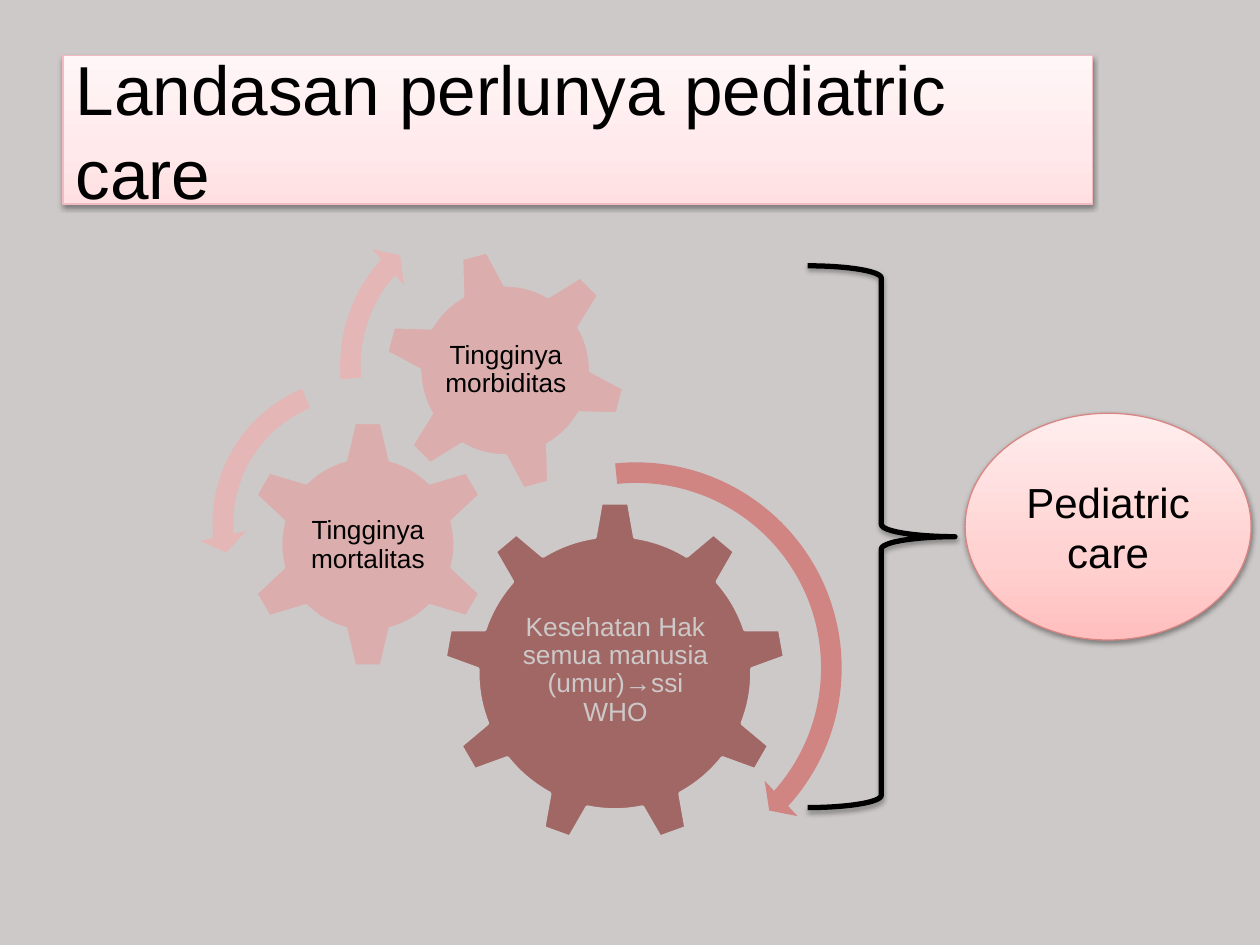
from dataclasses import dataclass

from lxml import etree
from pptx import Presentation, util as u
from pptx.dml.color import RGBColor
from pptx.enum import shapes as s, text as t
from pptx.oxml.ns import qn

COLUMNS, ROWS = 100, 75
FONT = "Arial"
BLACK = RGBColor(0x00, 0x00, 0x00)
GREY = RGBColor(0xCD, 0xC9, 0xC9)
DARK_ROSE = RGBColor(0xA1, 0x67, 0x65)
ROSE = RGBColor(0xDB, 0xAE, 0xAD)
CORAL = RGBColor(0xD0, 0x85, 0x83)
PALE_ROSE = RGBColor(0xE4, 0xB7, 0xB6)
OUTLINE = RGBColor(0xD7, 0x86, 0x84)
TITLE_OUTLINE = RGBColor(0xF0, 0xBC, 0xBF)
TITLE_STOPS = ((0, RGBColor(0xFF, 0xDF, 0xE1)), (35, RGBColor(0xFF, 0xE9, 0xEB)),
               (100, RGBColor(0xFF, 0xF6, 0xF7)))
OUTCOME_STOPS = ((0, RGBColor(0xFF, 0xBF, 0xBE)), (35, RGBColor(0xFF, 0xD1, 0xD0)),
                 (100, RGBColor(0xFF, 0xED, 0xED)))


@dataclass(frozen=True)
class Area:
    column: float
    row: float
    columns: float
    rows: float


@dataclass(frozen=True)
class Gear:
    preset: s.MSO_SHAPE
    area: Area
    label_area: Area
    label: str
    fill: RGBColor
    ink: RGBColor = BLACK
    rotation: float = 0


@dataclass(frozen=True)
class TurnArrow:
    preset: s.MSO_SHAPE
    area: Area
    adjustments: tuple[float, ...]
    fill: RGBColor


GEARS = (
    Gear(s.MSO_SHAPE.GEAR_9, Area(35.2, 39.8, 27.2, 27.2), Area(40.7, 46.2, 16.3, 14),
         "Kesehatan Hak semua manusia (umur)→ssi WHO", DARK_ROSE, GREY),
    Gear(s.MSO_SHAPE.GEAR_6, Area(19.3, 33.3, 19.8, 19.8), Area(24.3, 38.4, 9.8, 9.8),
         "Tingginya mortalitas", ROSE),
    Gear(s.MSO_SHAPE.GEAR_6, Area(30.4, 19.7, 19.4, 19.4), Area(34.7, 23.9, 10.9, 10.9),
         "Tingginya morbiditas", ROSE, rotation=345),
)
TURN_ARROWS = (
    TurnArrow(s.MSO_SHAPE.CIRCULAR_ARROW, Area(33.1, 35.6, 34.8, 34.8),
              (0.047, 2.99, 25.236, 158.454, 0.055), CORAL),
    TurnArrow(s.MSO_SHAPE.LEFT_CIRCULAR_ARROW, Area(15.8, 28.9, 25.3, 25.3),
              (0.065, 4.3, 104.891, 148.378, 0.075), PALE_ROSE),
    TurnArrow(s.MSO_SHAPE.CIRCULAR_ARROW, Area(25.9, 15.4, 27.3, 27.3),
              (0.06, 3.941, 133.138, 105.082, 0.07), PALE_ROSE),
)

deck = Presentation()
deck.slide_width, deck.slide_height = u.Inches(10), u.Inches(7.5)


def place(area: Area) -> tuple[int, int, int, int]:
    column, row = deck.slide_width / COLUMNS, deck.slide_height / ROWS
    return (round(area.column * column), round(area.row * row),
            round(area.columns * column), round(area.rows * row))


def add_preset(parent, preset: s.MSO_SHAPE, area: Area):
    shape = parent.add_shape(preset, *place(area))
    shape.shadow.inherit = False
    return shape


def outline(shape, color: RGBColor, width: float) -> None:
    shape.line.color.rgb = color
    shape.line.width = u.Pt(width)


def shade(shape, stops) -> None:
    shape.fill.gradient()
    shape.fill.gradient_angle = 90
    stop_list = shape._element.spPr.find(".//" + qn("a:gsLst"))
    for stop in list(stop_list):
        stop_list.remove(stop)
    for percent, color in stops:
        stop = etree.SubElement(stop_list, qn("a:gs"), pos=str(percent * 1000))
        etree.SubElement(stop, qn("a:srgbClr"), val=str(color))


def cast_shadow(shape, opacity: int, distance: float) -> None:
    shape.shadow.inherit = False
    effects = shape._element.spPr.find(qn("a:effectLst"))
    shadow = etree.SubElement(effects, qn("a:outerShdw"), blurRad=str(u.Pt(3.1)),
                              dist=str(u.Pt(distance)), dir="5400000", rotWithShape="0")
    color = etree.SubElement(shadow, qn("a:srgbClr"), val=str(BLACK))
    etree.SubElement(color, qn("a:alpha"), val=str(opacity * 1000))


def write(shape, wording: str, size: float, ink: RGBColor, align: t.PP_ALIGN) -> None:
    frame = shape.text_frame
    frame.text = wording
    frame.word_wrap = True
    frame.auto_size = t.MSO_AUTO_SIZE.NONE
    frame.vertical_anchor = t.MSO_ANCHOR.MIDDLE
    paragraph = frame.paragraphs[0]
    paragraph.alignment = align
    font = paragraph.runs[0].font
    font.name, font.size = FONT, u.Pt(size)
    font.color.rgb = ink


def add_gear(parent, gear: Gear) -> None:
    wheel = add_preset(parent, gear.preset, gear.area)
    wheel.rotation = gear.rotation
    wheel.fill.solid()
    wheel.fill.fore_color.rgb = gear.fill
    outline(wheel, GREY, 2)
    label = parent.add_textbox(*place(gear.label_area))
    write(label, gear.label, 15, gear.ink, t.PP_ALIGN.CENTER)
    frame = label.text_frame
    frame.margin_left = frame.margin_right = u.Inches(0.02)
    frame.margin_top = frame.margin_bottom = u.Inches(0.02)
    frame.paragraphs[0].line_spacing = 0.9


def add_turn_arrow(parent, turn: TurnArrow) -> None:
    arrow = add_preset(parent, turn.preset, turn.area)
    for index, value in enumerate(turn.adjustments):
        arrow.adjustments[index] = value
    arrow.fill.solid()
    arrow.fill.fore_color.rgb = turn.fill
    arrow.line.fill.background()


def main() -> None:
    slide = deck.slides.add_slide(deck.slide_layouts[5])
    slide.background.fill.solid()
    slide.background.fill.fore_color.rgb = GREY

    title = slide.shapes.title
    title.left, title.top, title.width, title.height = place(Area(5, 4.4, 81.7, 11.8))
    shade(title, TITLE_STOPS)
    outline(title, TITLE_OUTLINE, 0.75)
    cast_shadow(title, 38, 1.6)
    write(title, "Landasan perlunya pediatric care", 39.6, BLACK, t.PP_ALIGN.LEFT)

    causes = slide.shapes.add_group_shape().shapes
    for gear in GEARS:
        add_gear(causes, gear)
    for turn in TURN_ARROWS:
        add_turn_arrow(causes, turn)

    brace = add_preset(slide.shapes, s.MSO_SHAPE.RIGHT_BRACE, Area(64.1, 21.1, 11.7, 43))
    brace.fill.background()
    outline(brace, BLACK, 3)
    cast_shadow(brace, 35, 1.8)

    outcome = add_preset(slide.shapes, s.MSO_SHAPE.OVAL, Area(76.6, 32.8, 22.7, 18))
    shade(outcome, OUTCOME_STOPS)
    outline(outcome, OUTLINE, 0.75)
    cast_shadow(outcome, 38, 1.6)
    write(outcome, "Pediatric care", 24, BLACK, t.PP_ALIGN.CENTER)

    deck.save("out.pptx")


if __name__ == "__main__":
    main()
